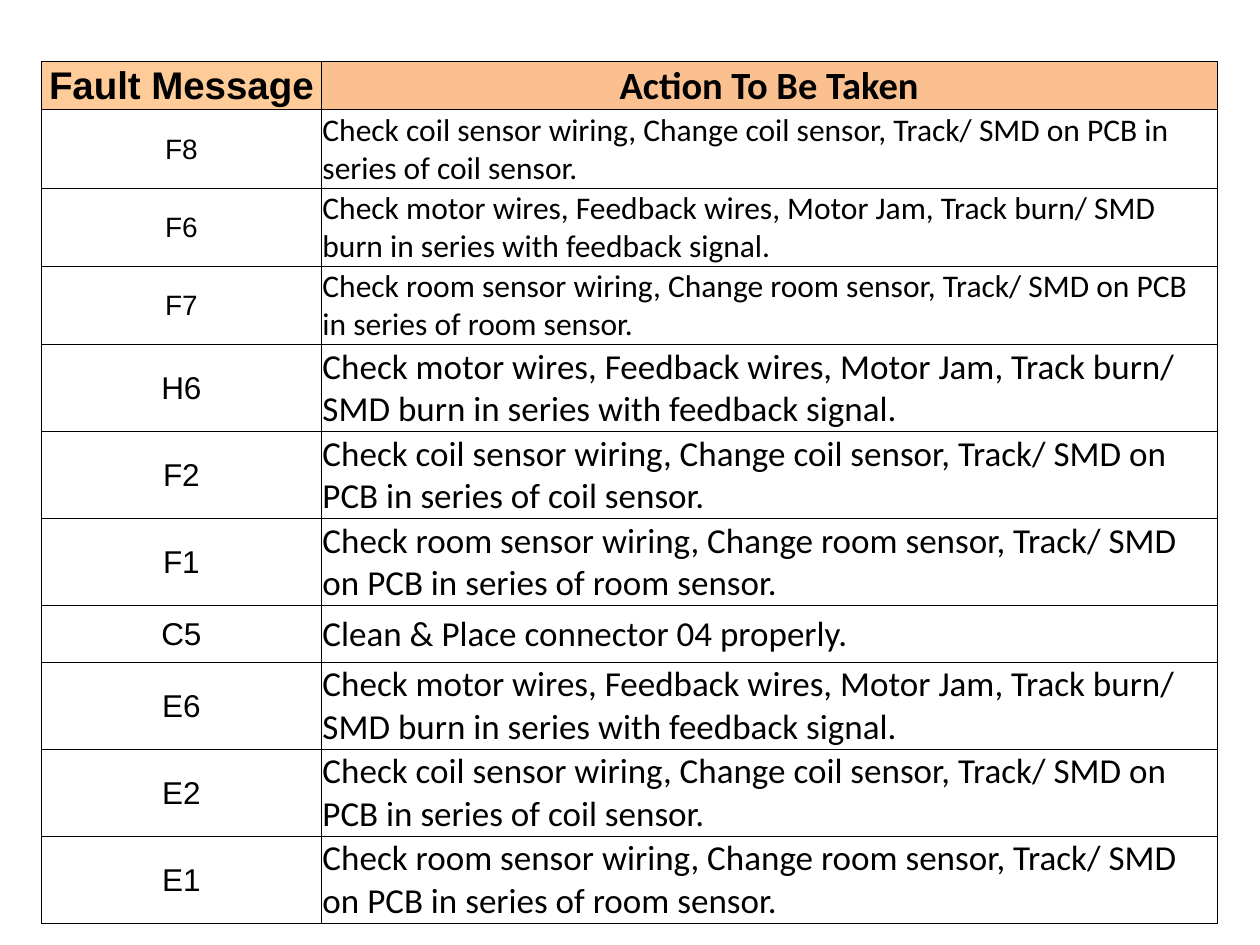
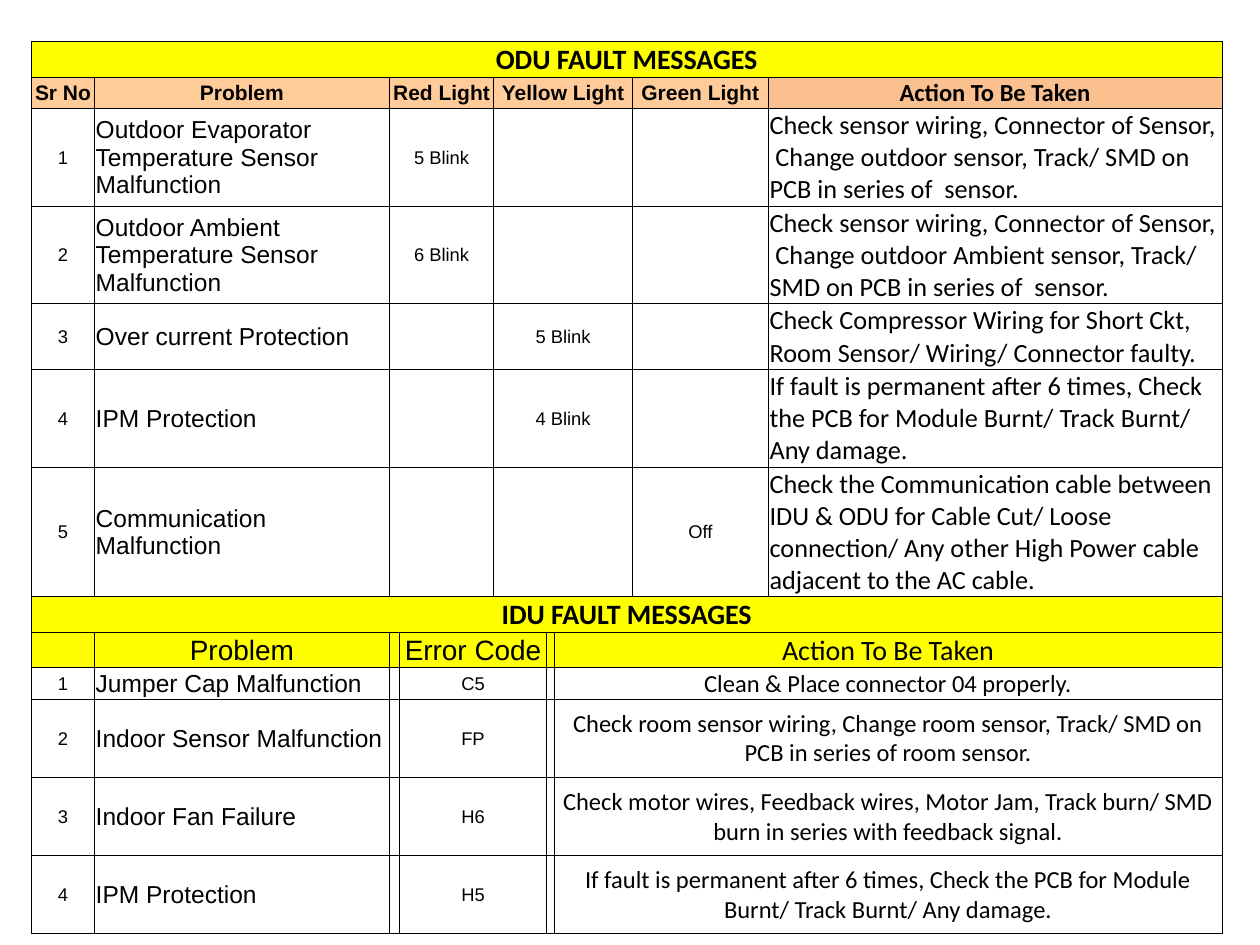
from dataclasses import dataclass, replace

from lxml import etree
from pptx import Presentation
from pptx.dml.color import RGBColor
from pptx.enum.text import MSO_ANCHOR as Anchor, PP_ALIGN as Align
from pptx.oxml.ns import qn
from pptx.util import Inches, Pt

BLACK = RGBColor(0x00, 0x00, 0x00)
WHITE = RGBColor(0xFF, 0xFF, 0xFF)
YELLOW = RGBColor(0xFF, 0xFF, 0x00)
PEACH = RGBColor(0xFF, 0xCC, 0x99)
ORANGE = RGBColor(0xFA, 0xC0, 0x90)
SANS, BODY = "Arial", "Calibri"


@dataclass(frozen=True)
class CellStyle:
    font: str
    size: float
    bold: bool = False
    align: Align = Align.CENTER
    fill: RGBColor = WHITE
    anchor: Anchor = Anchor.MIDDLE


def left(font, size):
    return CellStyle(font, size, align=Align.LEFT)


BAND = CellStyle(BODY, 16, True, fill=YELLOW, anchor=Anchor.BOTTOM)
CODE = CellStyle(SANS, 10.5)
PROBLEM = left(SANS, 14)
ODU_ACTION = left(BODY, 15)
IDU_ACTION = CellStyle(BODY, 14)
IDU_HEAD = CellStyle(SANS, 16, fill=YELLOW)


class Deck:
    """Holds the shared table style and the current slide; lengths are percent of the slide."""

    inset = Inches(0.01)
    border = Pt(0.5)

    def __init__(self):
        self.prs = Presentation()
        self.prs.slide_width, self.prs.slide_height = Inches(10), Inches(7.5)

    def x(self, percent):
        return round(self.prs.slide_width * percent / 100)

    def y(self, percent):
        return round(self.prs.slide_height * percent / 100)

    def add_slide(self):
        self.s = self.prs.slides.add_slide(self.prs.slide_layouts[6])

    def add_table(self, place, height, cols, rows):
        """Each row is (height, spans, [(text, style), ...])."""
        frame = self.s.shapes.add_table(len(rows), len(cols), self.x(place[0]), self.y(place[1]),
                                        self.x(sum(cols)), self.y(height))
        table = frame.table
        table.first_row = table.horz_banding = False
        for col, width in zip(table.columns, cols):
            col.width = self.x(width)
        for i, (row_height, spans, entries) in enumerate(rows):
            table.rows[i].height = self.y(row_height)
            start = 0
            for span, (text, style) in zip(spans, entries):
                for j in range(start, start + span):
                    self.format_cell(table.cell(i, j), text if j == start else "", style)
                if span > 1:
                    table.cell(i, start).merge(table.cell(i, start + span - 1))
                start += span
        frame.height = self.y(height)

    def format_cell(self, cell, text, style):
        cell.margin_left = cell.margin_right = cell.margin_top = self.inset
        cell.margin_bottom = 0
        cell.vertical_anchor = style.anchor
        cell.fill.solid()
        cell.fill.fore_color.rgb = style.fill
        self.add_borders(cell)
        p = cell.text_frame.paragraphs[0]
        p.alignment = style.align
        p.font.name, p.font.size, p.font.bold = style.font, Pt(style.size), style.bold
        p.font.color.rgb = BLACK
        if text:
            p.add_run().text = text
        else:
            etree.SubElement(p._p, qn("a:endParaRPr"), sz=str(round(style.size * 100)))

    def add_borders(self, cell):
        tc_pr = cell._tc.get_or_add_tcPr()
        for k, side in enumerate("LRTB"):
            ln = etree.Element(qn(f"a:ln{side}"), w=str(self.border))
            fill = etree.SubElement(ln, qn("a:solidFill"))
            etree.SubElement(fill, qn("a:srgbClr"), val=str(BLACK))
            tc_pr.insert(k, ln)


COIL = "Check coil sensor wiring, Change coil sensor, Track/ SMD on PCB in series of coil sensor."
MOTOR = ("Check motor wires, Feedback wires, Motor Jam, Track burn/ SMD burn in series "
         "with feedback signal.")
ROOM = "Check room sensor wiring, Change room sensor, Track/ SMD on PCB in series of room sensor."
CONNECTOR = "Clean & Place connector 04 properly."
MODULE = ("If fault is permanent after 6 times, Check the PCB for Module Burnt/ Track Burnt/ "
          "Any damage.")
ACTION = "Action To Be Taken"

# height %, code size, action size, code, action
FAULTS = [
    (6, 16, 18, "F8", COIL),
    (6, 16, 18, "F6", MOTOR),
    (6, 16, 18, "F7", ROOM),
    (7.07, 18, 20, "H6", MOTOR),
    (7.07, 18, 20, "F2", COIL),
    (7.07, 18, 20, "F1", ROOM),
    (6, 18, 20, "C5", CONNECTOR),
    (7.07, 18, 20, "E6", MOTOR),
    (7.07, 18, 20, "E2", COIL),
    (7.07, 18, 20, "E1", ROOM),
]

# height %, problem, (red, yellow, green), action
ODU_FAULTS = [
    (8.27, "Outdoor Evaporator Temperature Sensor Malfunction", ("5 Blink", "", ""),
     "Check sensor wiring, Connector of Sensor,  Change outdoor sensor, Track/ SMD on PCB "
     "in series of  sensor."),
    (8.27, "Outdoor Ambient Temperature Sensor Malfunction", ("6 Blink", "", ""),
     "Check sensor wiring, Connector of Sensor,  Change outdoor Ambient sensor, Track/ SMD "
     "on PCB in series of  sensor."),
    (5.47, "Over current Protection", ("", "5 Blink", ""),
     "Check Compressor Wiring for Short Ckt, Room Sensor/ Wiring/ Connector faulty."),
    (8.27, "IPM Protection", ("", "4 Blink", ""), MODULE),
    (11.07, "Communication Malfunction", ("", "", "Off"),
     "Check the Communication cable between IDU & ODU for Cable Cut/ Loose connection/ "
     "Any other High Power cable adjacent to the AC cable."),
]

# height %, problem, error code, action
IDU_FAULTS = [
    (2.8, "Jumper Cap Malfunction", "C5", CONNECTOR),
    (8.27, "Indoor Sensor Malfunction", "FP", ROOM),
    (8.27, "Indoor Fan Failure", "H6", MOTOR),
    (8.27, "IPM Protection", "H5", MODULE),
]


def fault_codes(deck):
    head = CellStyle(SANS, 22, True, fill=PEACH)
    rows = [(3.07, (1, 1), [("Fault Message", head),
                            (ACTION, replace(head, font=BODY, fill=ORANGE))])]
    for height, code_size, action_size, code, action in FAULTS:
        rows.append((height, (1, 1), [(code, CellStyle(SANS, code_size)),
                                      (action, left(BODY, action_size))]))
    deck.add_slide()
    deck.add_table((3.3, 6.53), 89.07, (22.2, 71.1), rows)


def unit_faults(deck):
    odu_spans, idu_spans = (1, 1, 2, 3, 1, 1), (1, 1, 1, 2, 1, 3)
    head = CellStyle(SANS, 12, True, fill=PEACH)
    titles = ("Sr No", "Problem", "Red Light", "Yellow Light", "Green Light")
    rows = [
        (3.47, (9,), [("ODU FAULT MESSAGES", BAND)]),
        (2.8, odu_spans, [(title, head) for title in titles]
         + [(ACTION, replace(head, font=BODY, size=14, fill=ORANGE))]),
    ]
    for n, (height, problem, lights, action) in enumerate(ODU_FAULTS, 1):
        rows.append((height, odu_spans, [(str(n), CODE), (problem, PROBLEM),
                                         *((light, CODE) for light in lights),
                                         (action, ODU_ACTION)]))
    rows += [
        (3.33, (9,), [("IDU FAULT MESSAGES", BAND)]),
        (2.8, idu_spans, [(title, IDU_HEAD) for title in ("", "Problem", "", "Error Code", "")]
         + [(ACTION, replace(IDU_HEAD, font=BODY))]),
    ]
    for n, (height, problem, code, action) in enumerate(IDU_FAULTS, 1):
        rows.append((height, idu_spans, [(str(n), CODE), (problem, PROBLEM), ("", CODE),
                                         (code, CODE), ("", CODE), (action, IDU_ACTION)]))
    deck.add_slide()
    deck.add_table((2.5, 4.4), 92.67, (5, 23.4, 0.8, 7.5, 4.2, 0.4, 6.2, 10.8, 36), rows)


def main():
    deck = Deck()
    fault_codes(deck)
    unit_faults(deck)
    deck.prs.save("out.pptx")


if __name__ == "__main__":
    main()
